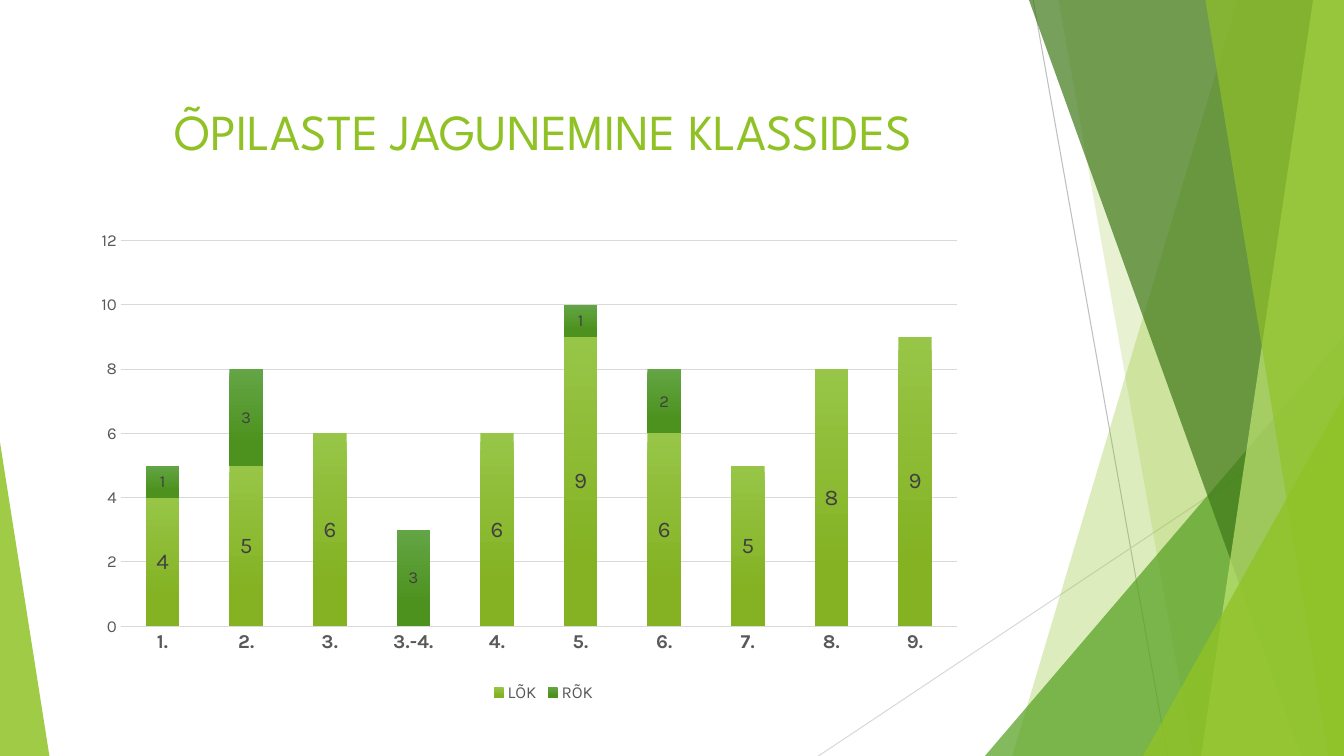
from dataclasses import dataclass

from lxml import etree
from pptx import Presentation
from pptx import util as u
from pptx.chart import data as chart_data
from pptx.dml.color import RGBColor
from pptx.enum import chart as chart_enum
from pptx.enum import shapes, text
from pptx.oxml.ns import qn

WIDTH, HEIGHT = 960, 540
HEADING_FONT, BODY_FONT = "League Spartan", "Karla"
COLORS = {
    "lime": "90C226",
    "green": "54A021",
    "forest": "3F7819",
    "pale": "C0E474",
    "silver": "BFBFBF",
    "grid": "D9D9D9",
    "axis": "595959",
    "label": "404040",
    "lime_top": "97C547",
    "lime_bottom": "84B223",
    "green_top": "63A545",
    "green_bottom": "4D921E",
}


@dataclass
class Line:
    start: tuple[float, float]
    end: tuple[float, float]
    color: str


@dataclass
class Facet:
    top_x: float
    bottom_x: float
    color: str
    opacity: int


@dataclass
class Wedge:
    left: float
    top: float
    width: float
    apex: float
    color: str
    opacity: int


@dataclass
class Group:
    name: str
    values: list[int | None]
    gradient: tuple[str, str]
    label_size: int


LINES = [
    Line((738, 0), (834, HEIGHT), "silver"),
    Line((WIDTH, 290), (584.6, HEIGHT), "grid"),
]
DECORATION = [
    Facet(884, 723, "lime", 30),
    Facet(756, 852, "lime", 20),
    Wedge(703.5, 240, 256.5, 1, "green", 72),
    Facet(735, 929.5, "forest", 70),
    Facet(938, 858, "pale", 70),
    Facet(861, 949, "lime", 65),
    Wedge(816.5, 283, 143.5, 1, "lime", 80),
    Wedge(0, 316, 35.3, 0, "lime", 85),
]
CLASSES = ["1.", "2.", "3.", "3.-4.", "4.", "5.", "6.", "7.", "8.", "9."]
GROUPS = [
    Group("LÕK", [4, 5, 6, None, 6, 9, 6, 5, 8, 9], ("lime_top", "lime_bottom"), 16),
    Group("RÕK", [1, 3, None, 3, None, 1, 2, None, None, None], ("green_top", "green_bottom"), 12),
]
PLOT_LAYOUT = {"x": 0.03, "y": 0.07, "w": 0.93, "h": 0.77}


def rgb(name: str) -> RGBColor:
    return RGBColor.from_string(COLORS[name])


def style_font(font, size: float, color: str, family: str = BODY_FONT, bold: bool = False) -> None:
    font.size, font.name, font.bold = u.Pt(size), family, bold
    font.color.rgb = rgb(color)


def paint(shape, color: str, opacity: int) -> None:
    shape.shadow.inherit = False
    shape.line.fill.background()
    shape.fill.solid()
    shape.fill.fore_color.rgb = rgb(color)
    for element in shape._element.spPr.iter(qn("a:srgbClr")):
        etree.SubElement(element, qn("a:alpha"), val=str(opacity * 1000))


def draw_line(slide, line: Line) -> None:
    ends = [u.Pt(value) for value in (*line.start, *line.end)]
    connector = slide.shapes.add_connector(shapes.MSO_CONNECTOR.STRAIGHT, *ends)
    connector.line.color.rgb = rgb(line.color)
    connector.line.width = u.Pt(0.75)
    etree.SubElement(connector._element.spPr, qn("a:effectLst"))


def draw_facet(slide, facet: Facet) -> None:
    corners = [(WIDTH, 0), (WIDTH, HEIGHT), (facet.bottom_x, HEIGHT)]
    builder = slide.shapes.build_freeform(u.Pt(facet.top_x), 0)
    builder.add_line_segments([(u.Pt(x), u.Pt(y)) for x, y in corners], close=True)
    paint(builder.convert_to_shape(), facet.color, facet.opacity)


def draw_wedge(slide, wedge: Wedge) -> None:
    box = [u.Pt(value) for value in (wedge.left, wedge.top, wedge.width, HEIGHT - wedge.top)]
    shape = slide.shapes.add_shape(shapes.MSO_SHAPE.ISOSCELES_TRIANGLE, *box)
    shape.adjustments[0] = wedge.apex
    paint(shape, wedge.color, wedge.opacity)


def write_title(slide, wording: str) -> None:
    title = slide.shapes.title
    title.left, title.top, title.width, title.height = map(u.Pt, (49.7, 67.7, 676.8, 103.7))
    frame = title.text_frame
    frame.text = wording
    frame.word_wrap = True
    frame.vertical_anchor = text.MSO_ANCHOR.TOP
    paragraph = frame.paragraphs[0]
    paragraph.alignment = text.PP_ALIGN.CENTER
    style_font(paragraph.font, 36, "lime", HEADING_FONT)


def style_series(series, group: Group) -> None:
    fill = series.format.fill
    fill.gradient()
    fill.gradient_angle = 270
    for stop, position, color in zip(fill.gradient_stops, (0, 0.78), group.gradient):
        stop.position = position
        stop.color.rgb = rgb(color)
    series.data_labels.show_value = True
    style_font(series.data_labels.font, group.label_size, "label")


def style_axes(chart) -> None:
    category, value = chart.category_axis, chart.value_axis
    for axis in (category, value):
        axis.major_tick_mark = axis.minor_tick_mark = chart_enum.XL_TICK_MARK.NONE
    style_font(category.tick_labels.font, 14, "axis", bold=True)
    category.format.line.color.rgb = rgb("grid")
    category.format.line.width = u.Pt(1)
    style_font(value.tick_labels.font, 12, "axis")
    value.minimum_scale, value.maximum_scale, value.major_unit = 0, 12, 2
    value.format.line.fill.background()
    value.major_gridlines.format.line.color.rgb = rgb("grid")
    value.major_gridlines.format.line.width = u.Pt(0.75)


def place_plot(chart) -> None:
    area = chart._chartSpace.find(".//" + qn("c:plotArea"))
    for existing in area.findall(qn("c:layout")):
        area.remove(existing)
    layout = etree.Element(qn("c:layout"))
    area.insert(0, layout)
    manual = etree.SubElement(layout, qn("c:manualLayout"))
    settings = {"layoutTarget": "inner", "xMode": "edge", "yMode": "edge", **PLOT_LAYOUT}
    for tag, setting in settings.items():
        etree.SubElement(manual, qn(f"c:{tag}"), val=str(setting))


def draw_chart(slide) -> None:
    data = chart_data.CategoryChartData()
    data.categories = CLASSES
    for group in GROUPS:
        data.add_series(group.name, group.values)
    box = [u.Pt(value) for value in (67, 146.9, 642.2, 357.8)]
    chart = slide.shapes.add_chart(chart_enum.XL_CHART_TYPE.COLUMN_STACKED, *box, data).chart
    chart.has_title = False
    chart.font.name, chart.font.size = BODY_FONT, u.Pt(10)
    chart.has_legend = True
    chart.legend.position = chart_enum.XL_LEGEND_POSITION.BOTTOM
    chart.legend.include_in_layout = False
    style_font(chart.legend.font, 12, "axis")
    plot = chart.plots[0]
    plot.gap_width, plot.overlap, plot.vary_by_categories = 150, 100, False
    for series, group in zip(plot.series, GROUPS):
        style_series(series, group)
    style_axes(chart)
    place_plot(chart)


def main() -> None:
    presentation = Presentation()
    presentation.slide_width, presentation.slide_height = u.Pt(WIDTH), u.Pt(HEIGHT)
    slide = presentation.slides.add_slide(presentation.slide_layouts[5])
    for line in LINES:
        draw_line(slide, line)
    for piece in DECORATION:
        if isinstance(piece, Facet):
            draw_facet(slide, piece)
        else:
            draw_wedge(slide, piece)
    write_title(slide, "ÕPILASTE JAGUNEMINE KLASSIDES")
    draw_chart(slide)
    presentation.save("out.pptx")


if __name__ == "__main__":
    main()
